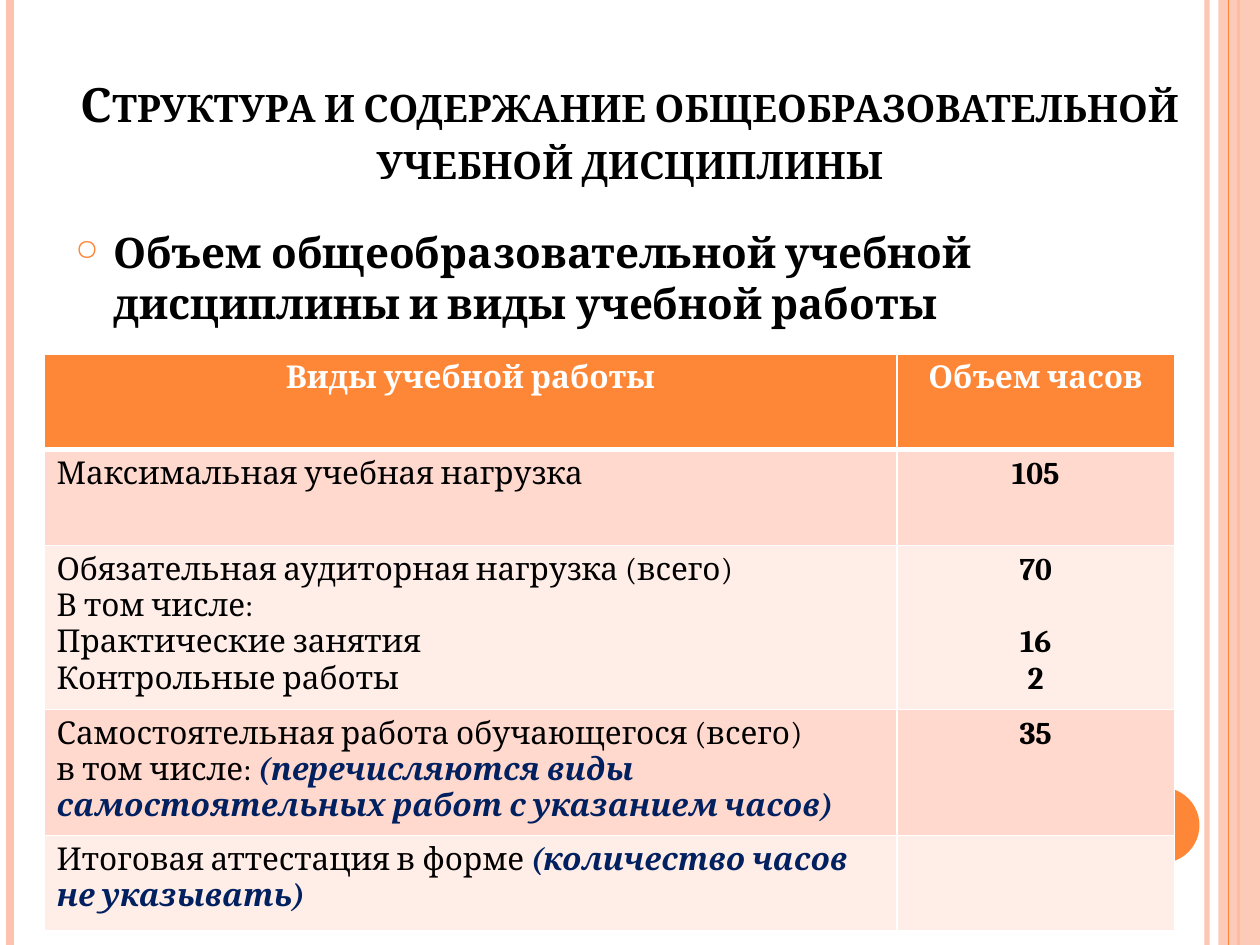
from dataclasses import dataclass
from pptx import Presentation
from pptx.dml.color import RGBColor as Rgb
from pptx.enum.shapes import MSO_CONNECTOR as Link, MSO_SHAPE as Kind
from pptx.enum.text import MSO_ANCHOR as Anchor, PP_ALIGN as Align
from pptx.oxml.ns import qn
from pptx.util import Inches, Pt
from lxml.etree import SubElement as Sub


@dataclass(frozen=True)
class Theme:
    font: str = "Cambria"
    black: str = "000000"
    white: str = "FFFFFF"
    navy: str = "002060"
    orange: str = "FE8637"
    peach: str = "FEC3AE"
    bands: tuple = ("FFD9CE", "FFEDE8")
    title: int = 27
    lead: int = 24
    cell: int = 18


THEME = Theme()


def write(frame, paras, size=THEME.cell, color=THEME.black, bold=False,
          align=Align.LEFT, caps=False, gaps=()):
    for i, parts in enumerate(paras):
        para = frame.paragraphs[0] if i == 0 else frame.add_paragraph()
        para.alignment = align
        if i in gaps:
            para.space_before = Pt(gaps[i])
        plain, *notes = (parts,) if isinstance(parts, str) else parts
        for text, note in [(plain, False)] + [(n, True) for n in notes]:
            run = para.add_run()
            run.text = text
            font = run.font
            font.name, font.size = THEME.font, Pt(size)
            font.bold, font.italic = bold or note, note
            font.color.rgb = Rgb.from_string(THEME.navy if note else color)
            if caps:
                font._element.set("cap", "small")


def fade(node, alpha):
    if alpha < 100:
        tint = next(node.iter(qn("a:srgbClr")))
        Sub(tint, qn("a:alpha")).set("val", str(alpha * 1000))


@dataclass
class Deck:
    slide: object
    theme: Theme
    unit: float = 0.1

    def span(self, *cells):
        return [Inches(c * self.unit) for c in cells]

    def rule(self, col, width, color, alpha=100):
        x, top, end = self.span(col, 0, 75)
        line = self.slide.shapes.add_connector(Link.STRAIGHT, x, top, x, end)
        line.line.width = Pt(width)
        line.line.color.rgb = Rgb.from_string(color)
        props = line._element.spPr
        fade(props, alpha)
        Sub(props, qn("a:effectLst"))

    def shape(self, kind, box, color, alpha=100):
        form = self.slide.shapes.add_shape(kind, *self.span(*box))
        form.shadow.inherit = False
        form.fill.solid()
        form.fill.fore_color.rgb = Rgb.from_string(color)
        form.line.fill.background()
        fade(form._element.spPr, alpha)

    def text(self, box, paras, anchor=Anchor.TOP, **style):
        frame = self.slide.shapes.add_textbox(*self.span(*box)).text_frame
        frame.word_wrap = True
        frame.vertical_anchor = anchor
        write(frame, paras, **style)
        return frame

    def bullet(self, box, text, **style):
        para = self.text(box, [text], gaps={0: 6}, **style).paragraphs[0]
        props = para._p.get_or_add_pPr()
        dent = self.span(3)[0]
        props.set("marL", str(dent))
        props.set("indent", str(-dent))
        tint = Sub(props, qn("a:buClr"))
        Sub(tint, qn("a:srgbClr")).set("val", self.theme.orange)
        Sub(props, qn("a:buSzPct")).set("val", "70000")
        Sub(props, qn("a:buChar")).set("char", "○")

    def edge(self, cell, row):
        props = cell._tc.get_or_add_tcPr()
        widths = {"L": 1, "R": 1, "T": 3 if row == 1 else 1,
                  "B": 3 if row == 0 else 1}
        for i, (side, width) in enumerate(widths.items()):
            line = Sub(props, qn("a:ln" + side))
            line.set("w", str(Pt(width)))
            fill = Sub(line, qn("a:solidFill"))
            Sub(fill, qn("a:srgbClr")).set("val", self.theme.white)
            props.insert(i, line)

    def table(self, left, top, cols, rows, data):
        box = self.span(left, top, sum(cols), sum(rows))
        grid = self.slide.shapes.add_table(len(rows), len(cols), *box).table
        for part, size in zip(grid.columns, self.span(*cols)):
            part.width = size
        for part, size in zip(grid.rows, self.span(*rows)):
            part.height = size
        for r, row in enumerate(data):
            for c, paras in enumerate(row):
                cell, head = grid.cell(r, c), r == 0
                color = self.theme.orange if head else self.theme.bands[(r - 1) % 2]
                cell.fill.solid()
                cell.fill.fore_color.rgb = Rgb.from_string(color)
                self.edge(cell, r)
                write(cell.text_frame, paras, bold=head or c == 1,
                      color=self.theme.white if head else self.theme.black,
                      align=Align.CENTER if head or c == 1 else Align.LEFT,
                      gaps={1: 20.8} if c == 1 else ())


HOURS = [
    (["Виды учебной работы"], ["Объем часов"]),
    (["Максимальная учебная нагрузка"], ["105"]),
    (["Обязательная аудиторная нагрузка (всего)", "В том числе:",
      "Практические занятия", "Контрольные работы"], ["70", "16", "2"]),
    (["Самостоятельная работа обучающегося (всего)",
      ("в том числе: ",
       "(перечисляются виды самостоятельных работ с указанием часов)")], ["35"]),
    ([("Итоговая аттестация в форме ", "(количество часов не указывать)")], []),
]


def main():
    show = Presentation()
    show.slide_width, show.slide_height = Inches(10), Inches(7.5)
    deck = Deck(show.slides.add_slide(show.slide_layouts[6]), THEME)
    deck.rule(95.8, 3, THEME.peach, alpha=93)
    deck.rule(0.8, 4.5, THEME.peach)
    deck.rule(98.3, 1.5, THEME.orange)
    deck.shape(Kind.RECTANGLE, (96.7, 0, 3.3, 75), THEME.peach, alpha=87)
    deck.rule(97.5, 0.75, THEME.orange)
    deck.shape(Kind.OVAL, (89.2, 62.5, 6, 6), THEME.orange)
    deck.text((1.2, 3, 97.6, 12.5),
              ["Структура и содержание общеобразовательной учебной дисциплины"],
              anchor=Anchor.BOTTOM, size=THEME.title, bold=True,
              align=Align.CENTER, caps=True)
    deck.bullet((5, 17.5, 91.5, 53.3),
                "Объем общеобразовательной учебной дисциплины и виды учебной работы",
                size=THEME.lead, bold=True)
    deck.table(3.5, 28.1, (67.7, 22), (7.6, 7.6, 12.5, 9.6, 7.6), HOURS)
    show.save("out.pptx")


if __name__ == "__main__":
    main()
